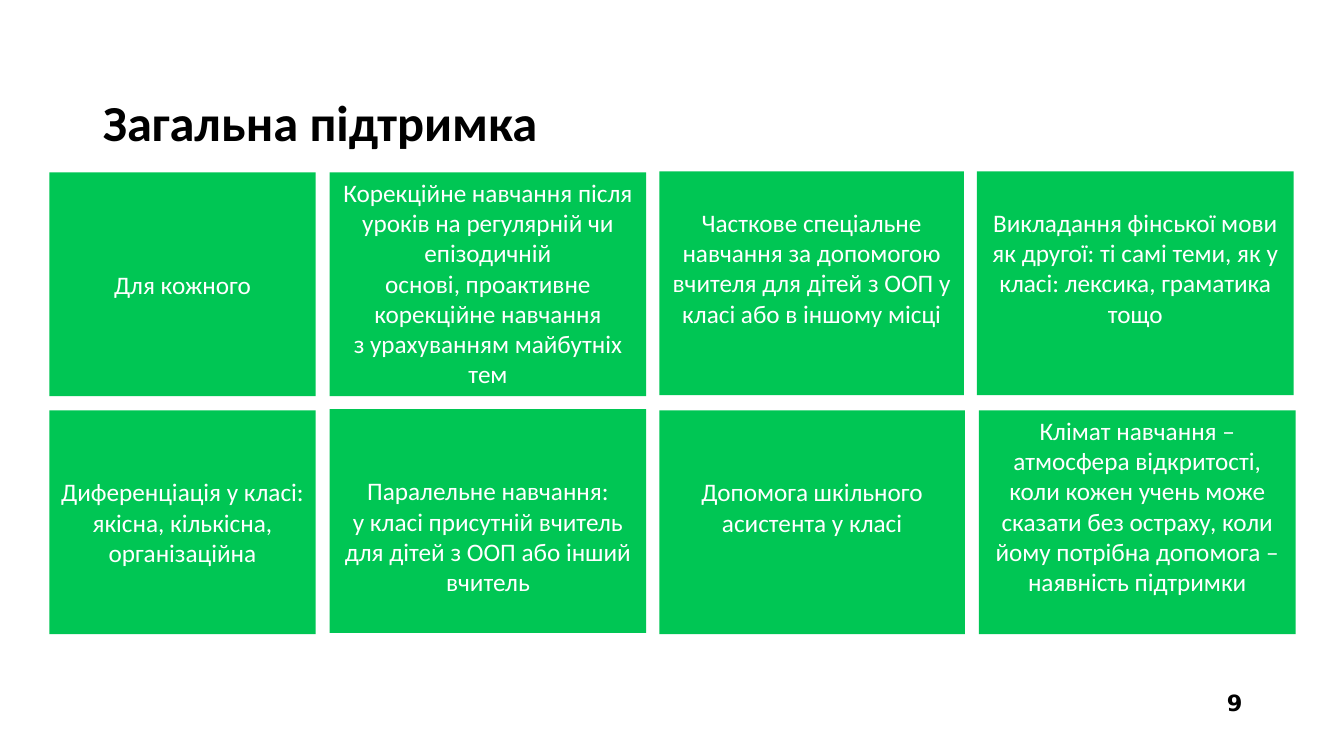
from pptx import Presentation
from pptx.dml.color import RGBColor
from pptx.enum.shapes import MSO_SHAPE
from pptx.enum.text import MSO_ANCHOR, PP_ALIGN
from pptx.util import Inches, Pt

GREEN = RGBColor(0x00, 0xC6, 0x54)
WHITE = RGBColor(0xFF, 0xFF, 0xFF)
BLACK = RGBColor(0x00, 0x00, 0x00)
RECTANGLE = MSO_SHAPE.RECTANGLE
TOP, MIDDLE = MSO_ANCHOR.TOP, MSO_ANCHOR.MIDDLE
LEFT, CENTER, RIGHT = PP_ALIGN.LEFT, PP_ALIGN.CENTER, PP_ALIGN.RIGHT

TITLE_FORMAT = {"name": "Calibri", "size": Pt(36), "bold": True}
CARD_FORMAT = {"name": "Calibri", "size": Pt(18), "bold": False}
NUMBER_FORMAT = {"name": "DejaVu Sans", "size": Pt(16), "bold": True}

CARD_HEIGHT = 2.22
LINE_HEIGHT = 0.305

# left, top, width, lines of space above the text, paragraphs
CARDS = [
    (0.49, 1.71, 2.64, 3, ["Для кожного"]),
    (3.27, 1.71, 3.14, 0, [
        "Корекційне навчання після",
        "уроків на регулярній чи епізодичній",
        "основі, проактивне корекційне навчання",
        "з урахуванням майбутніх тем"]),
    (6.54, 1.7, 3.02, 1, [
        "Часткове спеціальне навчання за допомогою вчителя "
        "для дітей з ООП у класі або в іншому місці"]),
    (9.69, 1.7, 3.14, 1, [
        "Викладання фінської мови як другої: ті самі теми, "
        "як у класі: лексика, граматика тощо"]),
    (0.49, 4.07, 2.64, 2, [
        "Диференціація у класі:",
        "якісна, кількісна,",
        "організаційна"]),
    (3.27, 4.06, 3.14, 2, [
        "Паралельне навчання:",
        "у класі присутній вчитель для дітей з ООП або інший вчитель"]),
    (6.54, 4.07, 3.03, 2, ["Допомога шкільного асистента у класі"]),
    (9.71, 4.07, 3.14, 0, [
        "Клімат навчання – атмосфера відкритості, коли кожен учень може "
        "сказати без остраху, коли йому потрібна допомога – "
        "наявність підтримки"]),
]


def write_text(shape, lines, text_format, color, align, anchor):
    frame = shape.text_frame
    frame.word_wrap = True
    frame.vertical_anchor = anchor
    frame.text = "\n".join(lines)
    for para in frame.paragraphs:
        para.alignment = align
        for span in para.runs:
            for key, value in text_format.items():
                setattr(span.font, key, value)
            span.font.color.rgb = color


deck = Presentation()
deck.slide_width = Inches(13.33)
deck.slide_height = Inches(7.5)
page = deck.slides.add_slide(deck.slide_layouts[5])

title = page.shapes.title
title.left, title.top = Inches(0.92), Inches(0.4)
title.width, title.height = Inches(11.5), Inches(1.45)
write_text(title, ["Загальна підтримка"], TITLE_FORMAT, BLACK, LEFT, MIDDLE)
title.text_frame.paragraphs[0].line_spacing = 1.25

for left, top, width, space_lines, lines in CARDS:
    card = page.shapes.add_shape(
        RECTANGLE, Inches(left), Inches(top), Inches(width), Inches(CARD_HEIGHT))
    card.shadow.inherit = False
    card.fill.solid()
    card.fill.fore_color.rgb = GREEN
    card.line.fill.background()
    write_text(card, lines, CARD_FORMAT, WHITE, CENTER, TOP)
    card.text_frame.margin_top = Inches(0.05 + space_lines * LINE_HEIGHT)

number_box = page.shapes.add_textbox(
    Inches(11.58), Inches(6.77), Inches(0.84), Inches(0.4))
write_text(number_box, ["9"], NUMBER_FORMAT, BLACK, RIGHT, MIDDLE)

deck.save("out.pptx")
